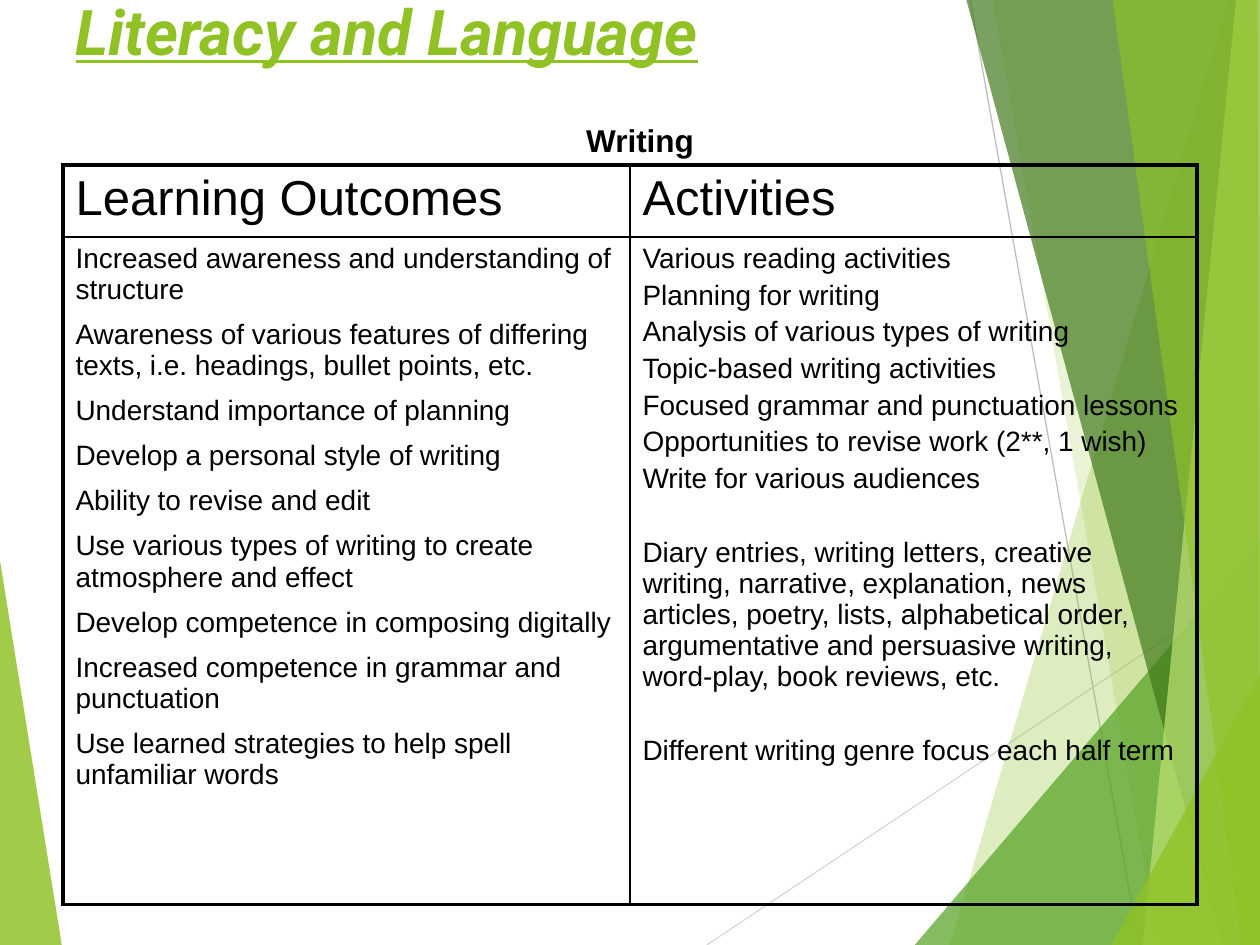
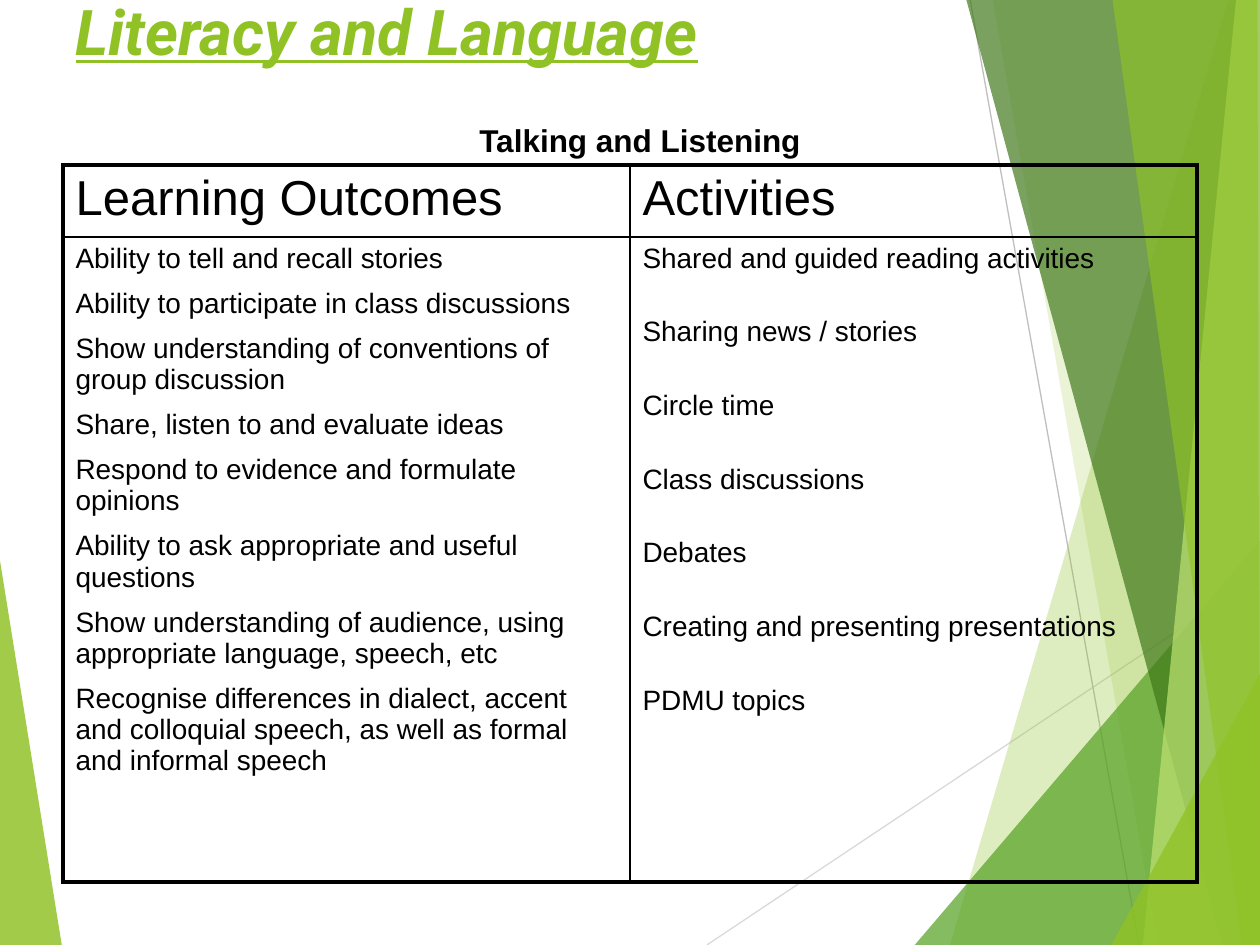
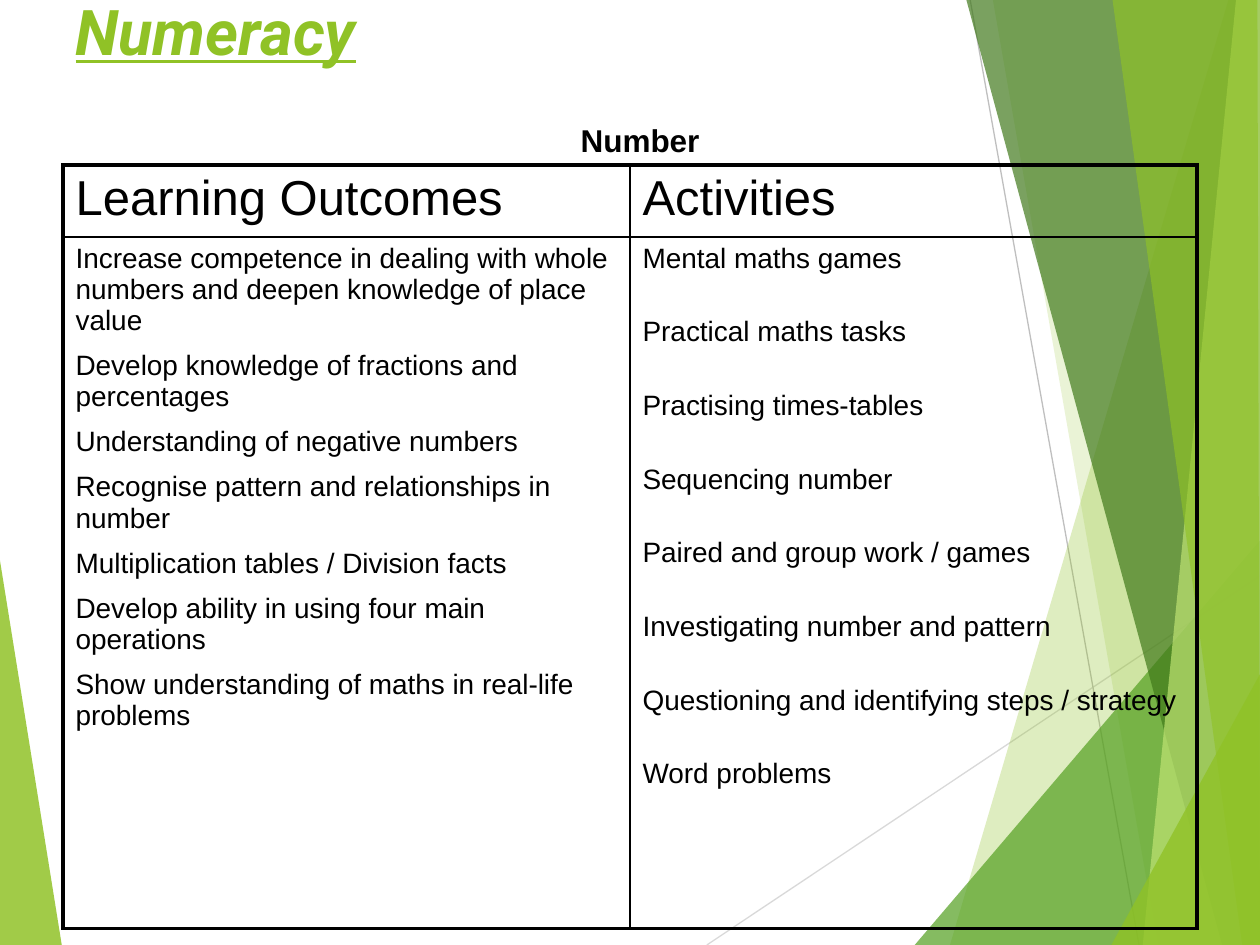
from lxml import etree
from pptx import Presentation
from pptx.dml.color import RGBColor
from pptx.enum.shapes import MSO_CONNECTOR
from pptx.enum.text import MSO_ANCHOR, PP_ALIGN
from pptx.oxml.ns import qn
from pptx.util import Inches, Pt

STRAIGHT = MSO_CONNECTOR.STRAIGHT
TOP = MSO_ANCHOR.TOP
LEFT, CENTER = PP_ALIGN.LEFT, PP_ALIGN.CENTER

BLACK = RGBColor(0x00, 0x00, 0x00)
LIME = RGBColor(0x90, 0xC2, 0x26)
GREEN = RGBColor(0x54, 0xA0, 0x21)
DARK_GREEN = RGBColor(0x3F, 0x78, 0x19)
PALE_LIME = RGBColor(0xC0, 0xE4, 0x74)
LIGHT_GRAY = RGBColor(0xD9, 0xD9, 0xD9)
MID_GRAY = RGBColor(0xBF, 0xBF, 0xBF)

TITLE_FONT, BODY_FONT = "Roboto", "Arial"
TITLE_ONLY = 5
WIDTH, HEIGHT = 10, 7.5
HEADER_HEIGHT = 0.57
OUTER_BORDER, INNER_BORDER = 2.25, 1
OUTCOME_GAP, ACTIVITY_GAP, GROUP_GAP = 8, 3.2, 24.3
HEADINGS = ("Learning Outcomes", "Activities")

# Corner points, colour and opacity in percent, from back to front
LEFT_FACET = ([(0, 4.45), (0.49, HEIGHT), (0, HEIGHT)], LIME, 84)
RIGHT_FACETS = [
    ([(9.75, 0), (7.54, HEIGHT), (WIDTH, HEIGHT), (WIDTH, 0)], LIME, 29),
    ([(7.88, 0), (9.19, HEIGHT), (WIDTH, HEIGHT), (WIDTH, 0)], LIME, 19),
    ([(7.26, HEIGHT), (WIDTH, 4.29), (WIDTH, HEIGHT)], GREEN, 71),
    ([(7.67, 0), (9.7, HEIGHT), (WIDTH, HEIGHT), (WIDTH, 0)], DARK_GREEN, 69),
    ([(9.81, 0), (9.07, HEIGHT), (WIDTH, HEIGHT), (WIDTH, 0)], PALE_LIME, 69),
    ([(8.83, 0), (9.86, HEIGHT), (WIDTH, HEIGHT), (9.98, 0)], LIME, 64),
    ([(8.82, HEIGHT), (WIDTH, 5.35), (WIDTH, HEIGHT)], LIME, 79),
]
RAYS = [
    ((5.61, HEIGHT), (WIDTH, 4.57), LIGHT_GRAY),
    ((7.7, 0), (9.04, HEIGHT), MID_GRAY),
]

# Activities are lists of groups; a wide gap separates the groups.
TOPICS = [
    {
        "title": "Literacy and Language",
        "caption": "Writing",
        "body_height": 5.3,
        "outcomes": [
            "Increased awareness and understanding of structure",
            "Awareness of various features of differing texts, i.e. headings, bullet points, etc.",
            "Understand importance of planning",
            "Develop a personal style of writing",
            "Ability to revise and edit",
            "Use various types of writing to create atmosphere and effect",
            "Develop competence in composing digitally",
            "Increased competence in grammar and punctuation",
            "Use learned strategies to help spell unfamiliar words",
        ],
        "activities": [
            [
                "Various reading activities",
                "Planning for writing",
                "Analysis of various types of writing",
                "Topic-based writing activities",
                "Focused grammar and punctuation lessons",
                "Opportunities to revise work (2**, 1 wish)",
                "Write for various audiences",
            ],
            [
                "Diary entries, writing letters, creative writing, narrative, explanation, "
                "news articles, poetry, lists, alphabetical order, argumentative and "
                "persuasive writing, word-play, book reviews, etc."
            ],
            ["Different writing genre focus each half term"],
        ],
    },
    {
        "title": "Literacy and Language",
        "caption": "Talking and Listening",
        "body_height": 5.12,
        "outcomes": [
            "Ability to tell and recall stories",
            "Ability to participate in class discussions",
            "Show understanding of conventions of group discussion",
            "Share, listen to and evaluate ideas",
            "Respond to evidence and formulate opinions",
            "Ability to ask appropriate and useful questions",
            "Show understanding of audience, using appropriate language, speech, etc",
            "Recognise differences in dialect, accent and colloquial speech, "
            "as well as formal and informal speech",
        ],
        "activities": [
            ["Shared and guided reading activities"],
            ["Sharing news / stories"],
            ["Circle time"],
            ["Class discussions"],
            ["Debates"],
            ["Creating and presenting presentations"],
            ["PDMU topics"],
        ],
    },
    {
        "title": "Numeracy",
        "caption": "Number",
        "body_height": 5.49,
        "outcomes": [
            "Increase competence in dealing with whole numbers and deepen knowledge of place value",
            "Develop knowledge of fractions and percentages",
            "Understanding of negative numbers",
            "Recognise pattern and relationships in number",
            "Multiplication tables / Division facts",
            "Develop ability in using four main operations",
            "Show understanding of maths in real-life problems",
        ],
        "activities": [
            ["Mental maths games"],
            ["Practical maths tasks"],
            ["Practising times-tables"],
            ["Sequencing number"],
            ["Paired and group work / games"],
            ["Investigating number and pattern"],
            ["Questioning and identifying steps / strategy"],
            ["Word problems"],
        ],
    },
]


def format_text(paragraph, size, font_name=BODY_FONT, color=BLACK, bold=False):
    for run in paragraph.runs:
        run.font.name = font_name
        run.font.size = Pt(size)
        run.font.color.rgb = color
        run.font.bold = bold


def add_facet(slide, points, color, opacity):
    corners = [(Inches(x), Inches(y)) for x, y in points]
    builder = slide.shapes.build_freeform(*corners[0])
    builder.add_line_segments(corners[1:], close=True)
    shape = builder.convert_to_shape()
    shape.shadow.inherit = False
    shape.line.fill.background()
    shape.fill.solid()
    shape.fill.fore_color.rgb = color
    color_element = shape.element.spPr.find(".//" + qn("a:srgbClr"))
    etree.SubElement(color_element, qn("a:alpha"), val=str(opacity * 1000))
    return shape


def add_ray(slide, start, end, color):
    points = [Inches(value) for value in start + end]
    connector = slide.shapes.add_connector(STRAIGHT, *points)
    connector.line.color.rgb = color
    connector.line.width = Pt(0.75)
    etree.SubElement(connector.element.spPr, qn("a:effectLst"))
    return connector


def decorate_layout(layout, slide):
    """Draw the facets on the slide, then move them to the shared layout."""
    decoration = [add_facet(slide, *LEFT_FACET)]
    decoration += [add_ray(slide, *ray) for ray in RAYS]
    decoration += [add_facet(slide, *facet) for facet in RIGHT_FACETS]
    for shape_id, shape in enumerate(decoration, start=20):
        shape.element.find(".//" + qn("p:cNvPr")).set("id", str(shape_id))
        layout.shapes.element.append(shape.element)


def set_title(slide, text):
    title = slide.shapes.title
    title.left, title.top = Inches(0.5), Inches(-0.11)
    title.width, title.height = Inches(9), Inches(1.25)
    title.text_frame.text = text
    title.text_frame.vertical_anchor = TOP
    paragraph = title.text_frame.paragraphs[0]
    paragraph.alignment = LEFT
    format_text(paragraph, 36, TITLE_FONT, LIME, bold=True)
    font = paragraph.runs[0].font
    font.italic = font.underline = True


def add_caption(slide, text):
    box = slide.shapes.add_textbox(Inches(3.27), Inches(0.91), Inches(3.62), Inches(0.4))
    box.text_frame.word_wrap = True
    box.text_frame.text = text
    paragraph = box.text_frame.paragraphs[0]
    paragraph.alignment = CENTER
    format_text(paragraph, 18, bold=True)


def set_borders(cell, row, column):
    """Give a cell of the two-by-two table heavy outer and thin inner borders."""
    outer_sides = {"L": column == 0, "R": column == 1, "T": row == 0, "B": row == 1}
    properties = cell._tc.get_or_add_tcPr()
    for side, is_outer in outer_sides.items():
        width = Pt(OUTER_BORDER if is_outer else INNER_BORDER)
        line = etree.SubElement(properties, qn("a:ln" + side), w=str(width))
        fill = etree.SubElement(line, qn("a:solidFill"))
        etree.SubElement(fill, qn("a:srgbClr"), val=str(BLACK))


def fill_cell(cell, entries, size):
    """Write (text, space before) entries as the paragraphs of a cell."""
    cell.text_frame.text = "\n".join(text for text, _ in entries)
    for paragraph, (_, gap) in zip(cell.text_frame.paragraphs, entries):
        paragraph.space_before = Pt(gap)
        format_text(paragraph, size)


def space_groups(groups, item_gap, group_gap):
    """Pair each text with the space before it; the first has none."""
    entries = [
        (text, item_gap if index else group_gap)
        for group in groups
        for index, text in enumerate(group)
    ]
    return [(entries[0][0], 0)] + entries[1:]


def add_topic_table(slide, topic):
    heights = (HEADER_HEIGHT, topic["body_height"])
    frame = slide.shapes.add_table(
        2, 2, Inches(0.5), Inches(1.31), Inches(9), Inches(sum(heights))
    )
    table = frame.table
    table.first_row = table.horz_banding = False
    for row, height in zip(table.rows, heights):
        row.height = Inches(height)
    bodies = (
        space_groups([topic["outcomes"]], OUTCOME_GAP, 0),
        space_groups(topic["activities"], ACTIVITY_GAP, GROUP_GAP),
    )
    for column, (heading, body) in enumerate(zip(HEADINGS, bodies)):
        fill_cell(table.cell(0, column), [(heading, 0)], 28)
        fill_cell(table.cell(1, column), body, 16)
        for row in range(2):
            cell = table.cell(row, column)
            set_borders(cell, row, column)
            cell.fill.background()


def main():
    presentation = Presentation()
    presentation.slide_width, presentation.slide_height = Inches(WIDTH), Inches(HEIGHT)
    layout = presentation.slide_layouts[TITLE_ONLY]
    slides = [presentation.slides.add_slide(layout) for _ in TOPICS]
    decorate_layout(layout, slides[0])
    for slide, topic in zip(slides, TOPICS):
        set_title(slide, topic["title"])
        add_topic_table(slide, topic)
        add_caption(slide, topic["caption"])
    presentation.save("out.pptx")


if __name__ == "__main__":
    main()
